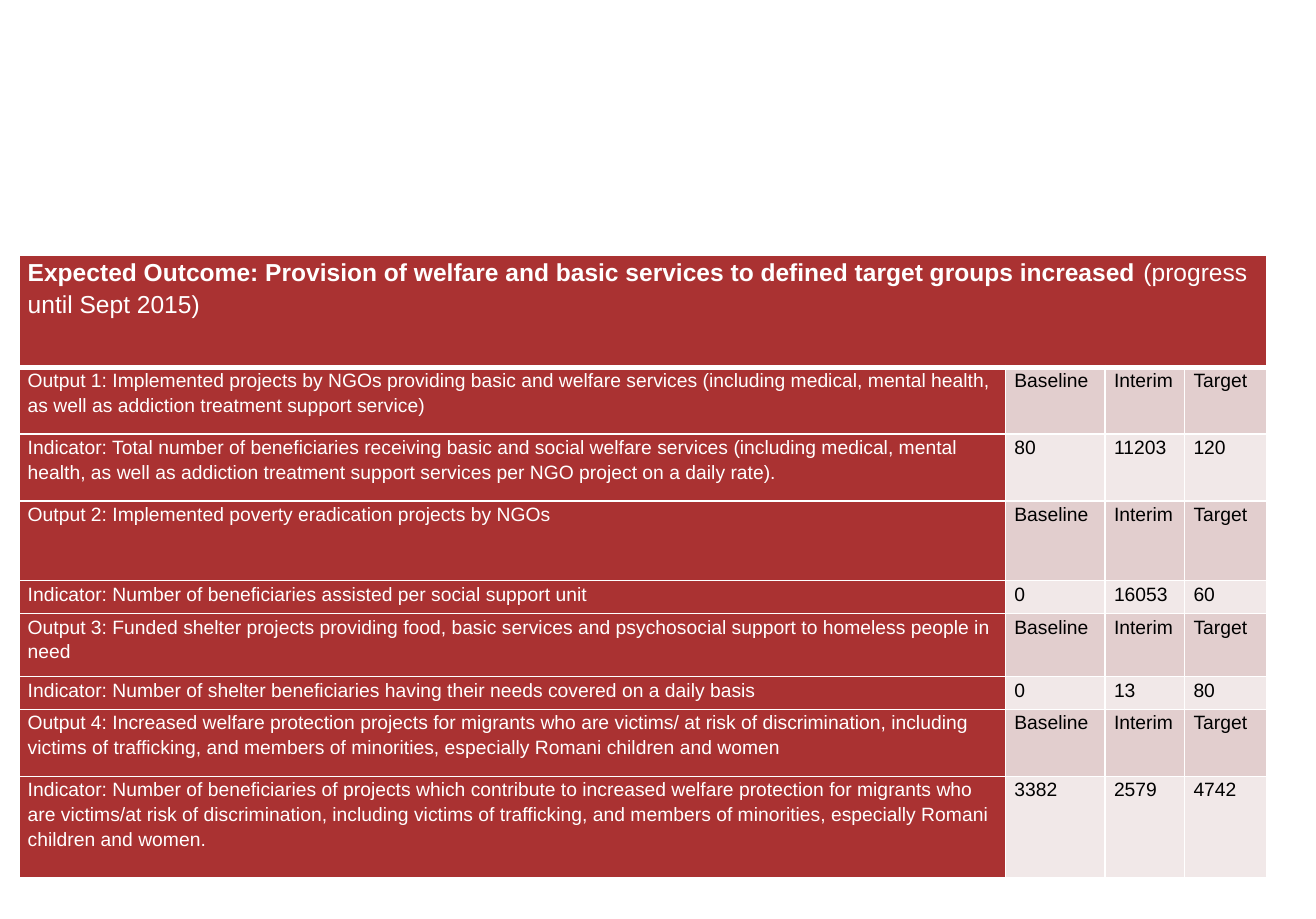
import dataclasses

import pptx
import pptx.dml.color
import pptx.oxml
import pptx.oxml.ns
import pptx.util

Inches = pptx.util.Inches
Pt = pptx.util.Pt

# Content
OUTCOME = (
    "Expected Outcome: Provision of welfare and basic services to defined target groups increased ",
    "(progress until Sept 2015)",
)
MEASURES = ("Baseline", "Interim", "Target")
# Output, its indicator, and the indicator's value for each measure
OUTPUTS = [
    ("Output 1: Implemented projects by NGOs providing basic and welfare services "
     "(including medical, mental health, as well as addiction treatment support service)",
     "Indicator: Total number of beneficiaries receiving basic and social welfare services "
     "(including medical, mental health, as well as addiction treatment support services "
     "per NGO project on a daily rate).",
     ("80", "11203", "120")),
    ("Output 2: Implemented poverty eradication projects by NGOs",
     "Indicator: Number of beneficiaries assisted per social support unit",
     ("0", "16053", "60")),
    ("Output 3: Funded shelter projects providing food, basic services and psychosocial "
     "support to homeless people in need",
     "Indicator: Number of shelter beneficiaries having their needs covered on a daily basis",
     ("0", "13", "80")),
    ("Output 4: Increased welfare protection projects for migrants who are victims/ at risk "
     "of discrimination, including victims of trafficking, and members of minorities, "
     "especially Romani children and women",
     "Indicator: Number of beneficiaries of projects which contribute to increased welfare "
     "protection for migrants who are victims/at risk of discrimination, including victims "
     "of trafficking, and members of minorities, especially Romani children and women.",
     ("3382", "2579", "4742")),
]

# Sizes in inches
LEFT, TOP = 0.15, 2.02
COLUMN_WIDTHS = (7.82, 0.79, 0.63, 0.65)
ROW_HEIGHTS = (0.89, 0.53, 0.53, 0.63, 0.26, 0.5, 0.26, 0.53, 0.8)


@dataclasses.dataclass(frozen=True)
class Theme:
    red: str = "AA3232"
    measure_pink: str = "E2CECE"
    value_pink: str = "F1E8E8"
    white: str = "FFFFFF"
    black: str = "000000"
    font: str = "Arial"
    outcome_size: int = 14
    body_size: int = 11
    rule: int = 1
    outcome_rule: int = 3


THEME = Theme()


def rgb(value):
    return pptx.dml.color.RGBColor.from_string(value)


def write(paragraph, text, *, size=THEME.body_size, color=THEME.black, bold=False):
    """Add one formatted run to a paragraph."""
    paragraph.line_spacing = 1.15
    paragraph.space_after = Pt(10)
    run = paragraph.add_run()
    run.text = text
    run.font.name = THEME.font
    run.font.size = Pt(size)
    run.font.bold = bold
    run.font.color.rgb = rgb(color)


def style_cell(cell, fill, bottom_rule=THEME.rule):
    """Set a cell's margins, white borders and fill."""
    cell.margin_left = cell.margin_right = Inches(0.07)
    cell.margin_top = cell.margin_bottom = 0
    properties = cell._tc.get_or_add_tcPr()
    for side in "LRTB":
        width = Pt(bottom_rule if side == "B" else THEME.rule)
        properties.append(pptx.oxml.parse_xml(
            f'<a:ln{side} {pptx.oxml.ns.nsdecls("a")} w="{width}"><a:solidFill>'
            f'<a:srgbClr val="{THEME.white}"/></a:solidFill></a:ln{side}>'))
    cell.fill.solid()
    cell.fill.fore_color.rgb = rgb(fill)


def main():
    deck = pptx.Presentation()
    deck.slide_width, deck.slide_height = Inches(10.43), Inches(7.28)
    slide = deck.slides.add_slide(deck.slide_layouts[6])

    # Table grid
    results = slide.shapes.add_table(
        len(ROW_HEIGHTS), len(COLUMN_WIDTHS), Inches(LEFT), Inches(TOP),
        Inches(sum(COLUMN_WIDTHS)), Inches(sum(ROW_HEIGHTS))).table
    for column, width in zip(results.columns, COLUMN_WIDTHS):
        column.width = Inches(width)
    for row, height in zip(results.rows, ROW_HEIGHTS):
        row.height = Inches(height)

    # Outcome heading across all columns
    for cell in results.rows[0].cells:
        style_cell(cell, THEME.red, THEME.outcome_rule)
    heading = results.cell(0, 0)
    heading.merge(results.cell(0, len(COLUMN_WIDTHS) - 1))
    for text, bold in zip(OUTCOME, (True, False)):
        write(heading.text_frame.paragraphs[0], text,
              size=THEME.outcome_size, color=THEME.white, bold=bold)

    # Each output gives a row of measures, then a row of values
    lines = []
    for output, indicator, values in OUTPUTS:
        lines.append((output, MEASURES, THEME.measure_pink))
        lines.append((indicator, values, THEME.value_pink))
    for row_number, (label, figures, pink) in enumerate(lines, start=1):
        for column_number, text in enumerate((label, *figures)):
            is_label = column_number == 0
            cell = results.cell(row_number, column_number)
            style_cell(cell, THEME.red if is_label else pink)
            write(cell.text_frame.paragraphs[0], text,
                  color=THEME.white if is_label else THEME.black)

    deck.save("out.pptx")


if __name__ == "__main__":
    main()
